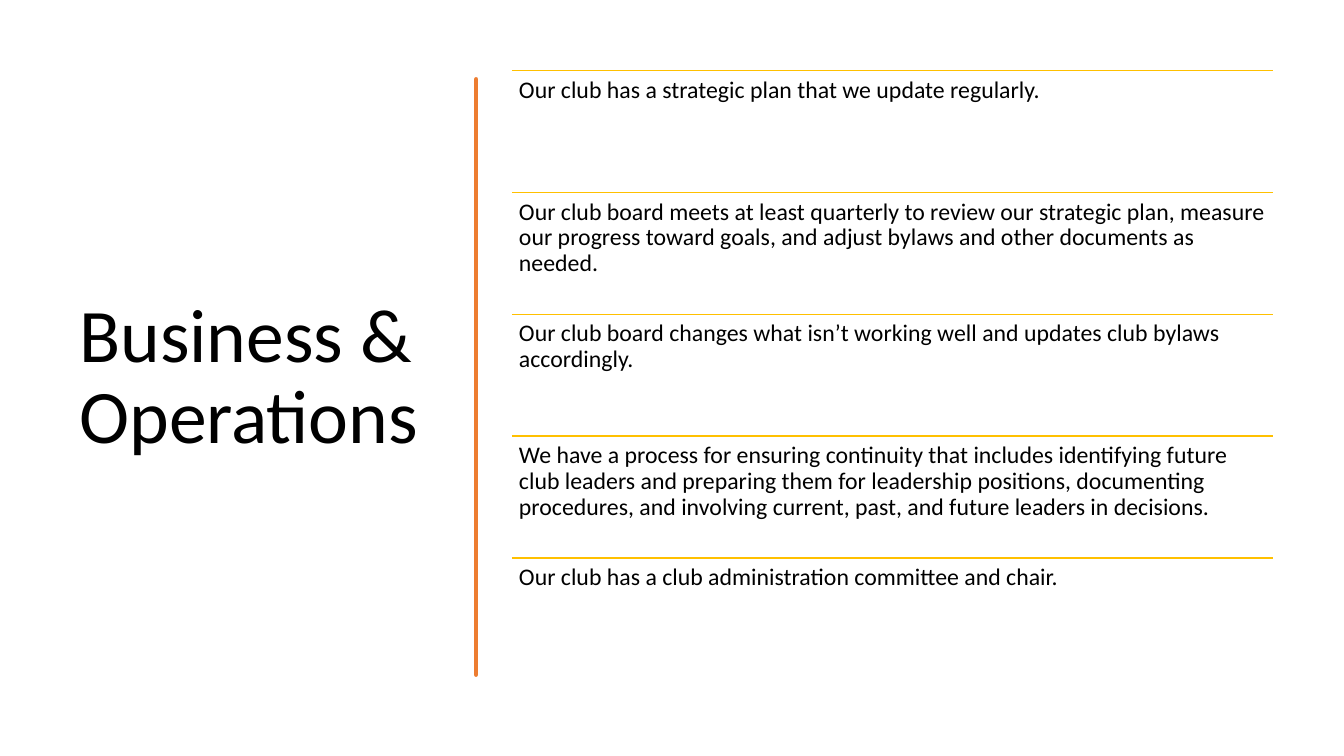
from lxml import etree
from pptx import Presentation
from pptx.dml.color import RGBColor
from pptx.enum.shapes import MSO_CONNECTOR
from pptx.enum.text import MSO_ANCHOR
from pptx.oxml.ns import qn
from pptx.util import Cm, Pt

STRAIGHT = MSO_CONNECTOR.STRAIGHT
TOP, MIDDLE = MSO_ANCHOR.TOP, MSO_ANCHOR.MIDDLE
COLORS = {"text": "000000", "rule": "FFC000", "brush": "ED7D31"}

GOALS = [
    "Our club has a strategic plan that we update regularly.",
    "Our club board meets at least quarterly to review our strategic plan, "
    "measure our progress toward goals, and adjust bylaws and other documents "
    "as needed.",
    "Our club board changes what isn’t working well and updates club bylaws "
    "accordingly.",
    "We have a process for ensuring continuity that includes identifying "
    "future club leaders and preparing them for leadership positions, "
    "documenting procedures, and involving current, past, and future leaders "
    "in decisions.",
    "Our club has a club administration committee and chair.",
]

# Goal rows, in cm
LEFT, FIRST, WIDTH, PITCH = 12.9, 1.78, 19.18, 3.07

# Brush edges, in cm: two control points and the end height of each curve
HEAD, FOOT = 2.13, 17.17
RIGHT_X, LEFT_X = 12.07, 12.01
RIGHT = [
    (12.12, 2.59, 12.12, 3.02, 3.71), (12.01, 4.39, 12.09, 4.95, 5.74),
    (12.04, 6.53, 12.07, 6.65, 7.47), (12.04, 8.26, 12.12, 8.69, 9.04),
    (12.01, 9.4, 12.17, 10.52, 11.07), (11.96, 11.61, 11.99, 12.29, 12.95),
    (12.12, 13.61, 12.12, 14.33, 14.83), (12.01, 15.32, 12.09, 16.51, FOOT),
]
BACK = [
    (12.04, 16.41, 11.96, 16.36, 15.57), (12.04, 14.81, 12.04, 14.48, 14.15),
    (11.99, 13.82, 11.99, 12.57, 12.12), (12.01, 11.66, 11.96, 11.3, 10.54),
    (12.04, 9.8, 11.99, 9.47, 8.51), (12.04, 7.57, 11.99, 7.14, 6.35),
    (12.04, 5.54, 12.07, 5.08, 4.6), (11.94, 4.14, 12.12, 2.64, HEAD),
]
STEPS = 8


def color(name):
    return RGBColor.from_string(COLORS[name])


def assign(item, values):
    for key, value in values.items():
        setattr(item, key, value)


def add_text(slide, text, box, size, anchor, inset):
    shape = slide.shapes.add_textbox(*map(Cm, box))
    frame = shape.text_frame
    side, end = map(Cm, inset)
    assign(frame, {"word_wrap": True, "vertical_anchor": anchor,
                   "margin_left": side, "margin_right": side,
                   "margin_top": end, "margin_bottom": end})
    para = frame.paragraphs[0]
    para.line_spacing = 0.9
    run = para.add_run()
    run.text = text
    assign(run.font, {"name": "Calibri", "size": Pt(size)})
    run.font.color.rgb = color("text")


def add_rule(slide, x, y, width):
    rule = slide.shapes.add_connector(
        STRAIGHT, Cm(x), Cm(y), Cm(x + width), Cm(y))
    rule.line.color.rgb = color("rule")
    rule.line.width = Pt(1)
    etree.SubElement(rule._element.spPr, qn("a:effectLst"))


def trace(x, y, curves):
    """Points along a chain of cubic curves that all end at the same x."""
    points = []
    for x1, y1, x2, y2, end in curves:
        for step in range(1, STEPS + 1):
            t = step / STEPS
            u = 1 - t
            mix = (u ** 3, 3 * u * u * t, 3 * u * t * t, t ** 3)
            points.append((sum(m * v for m, v in zip(mix, (x, x1, x2, x))),
                           sum(m * v for m, v in zip(mix, (y, y1, y2, end)))))
        y = end
    return points


def add_brush(slide):
    outline = slide.shapes.build_freeform(RIGHT_X, HEAD, scale=Cm(1))
    outline.add_line_segments(
        trace(RIGHT_X, HEAD, RIGHT) + [(LEFT_X, FOOT)]
        + trace(LEFT_X, FOOT, BACK), close=True)
    brush = outline.convert_to_shape()
    brush.shadow.inherit = False
    brush.fill.solid()
    brush.fill.fore_color.rgb = color("brush")
    brush.line.color.rgb = color("brush")
    brush.line.width = Pt(3.25)
    # Rounded corners
    etree.SubElement(brush.line._get_or_add_ln(), qn("a:round"))


def main():
    deck = Presentation()
    assign(deck, {"slide_width": Cm(33.87), "slide_height": Cm(19.05)})
    slide = deck.slides.add_slide(deck.slide_layouts[6])

    # Title and divider
    add_text(slide, "Business & Operations", (1.75, 1.78, 9.5, 15.52),
             54, MIDDLE, (0.25, 0.13))
    add_brush(slide)

    # Goals, each under its rule
    for row, goal in enumerate(GOALS):
        y = FIRST + row * PITCH
        add_rule(slide, LEFT, y, WIDTH)
        add_text(slide, goal, (LEFT, y, WIDTH, PITCH), 17, TOP, (0.18, 0.18))

    deck.save("out.pptx")


if __name__ == "__main__":
    main()
